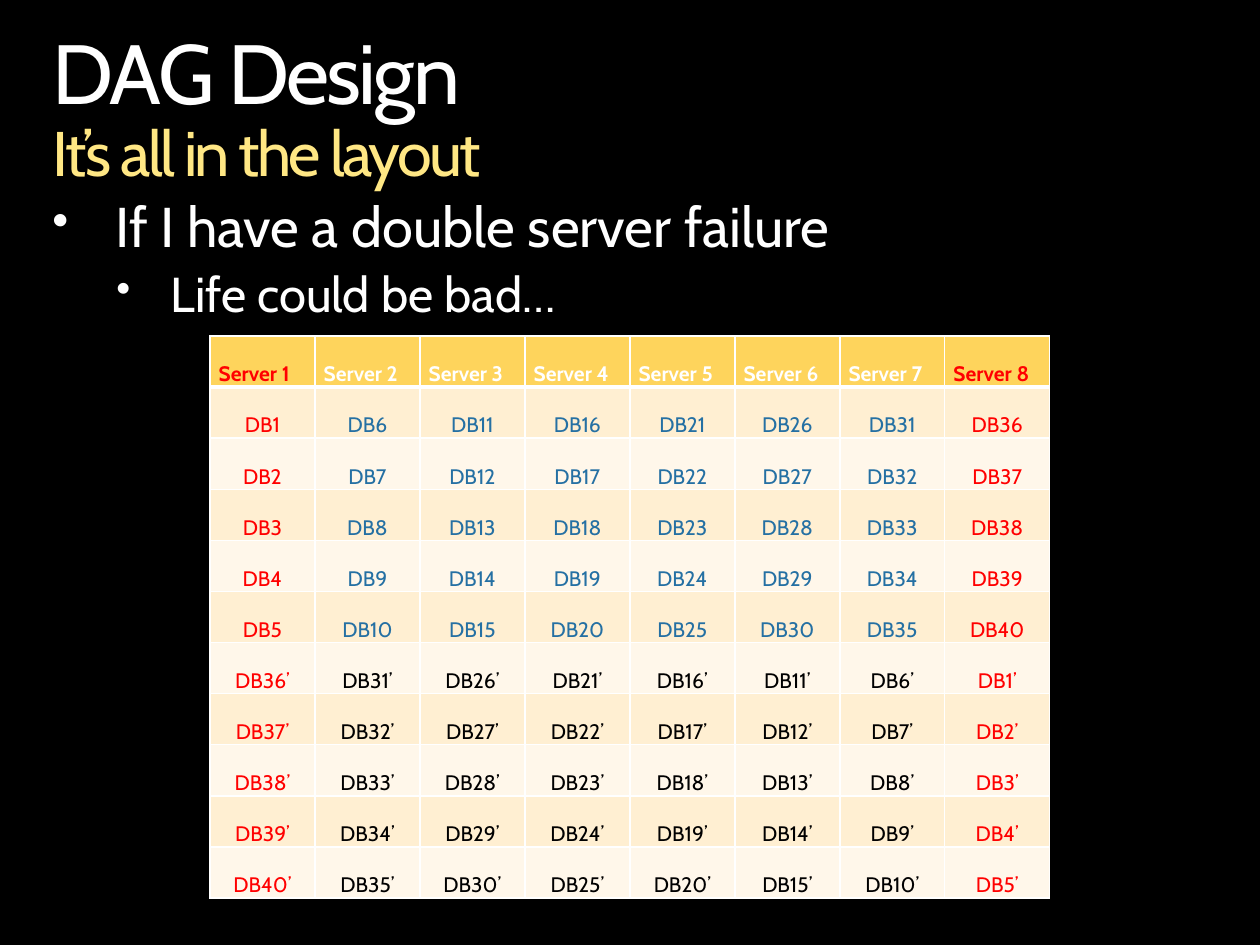
from lxml import etree
from pptx import Presentation
from pptx.dml.color import RGBColor
from pptx.enum.text import MSO_ANCHOR, MSO_AUTO_SIZE, PP_ALIGN
from pptx.oxml.ns import qn
from pptx.util import Pt

BOTTOM, CENTER, LEFT = MSO_ANCHOR.BOTTOM, PP_ALIGN.CENTER, PP_ALIGN.LEFT
GROW = MSO_AUTO_SIZE.SHAPE_TO_FIT_TEXT

TITLE = "DAG Design"
SUB = "It’s all in the layout"
# text, size key, left margin, hanging indent, space before
POINTS = [
    ("If I have a double server failure", "point", 36, -36, 0),
    ("Life could be bad…", "detail", 67.5, -31, 5.6),
]
SERVERS, PER = 8, 5
FAILED = (0, SERVERS - 1)

THEME = {
    "font": "Cabin",
    "size": {"title": 48, "sub": 36, "point": 32, "detail": 28, "cell": 12},
    "back": "000000", "text": "FFFFFF", "sub": "FFE784",
    "head": "FED45C", "bands": ("FFEFD2", "FFF7EA"), "edge": "FFFFFF",
    "fail": "FF0000", "live": "2570A3", "copy": "000000",
}


def rgb(code):
    return RGBColor.from_string(code)


def add_run(para, text, size, color, bold=False, track=None):
    run = para.add_run()
    run.text = text
    font = run.font
    font.name, font.size, font.bold = THEME["font"], Pt(THEME["size"][size]), bold
    font.color.rgb = rgb(color)
    if track is not None:
        run._r.get_or_add_rPr().set("spc", str(round(track * 100)))


def add_box(slide, left, top, width, height):
    frame = slide.shapes.add_textbox(Pt(left), Pt(top), Pt(width), Pt(height)).text_frame
    frame.word_wrap, frame.auto_size = True, GROW
    frame.margin_left = frame.margin_right = frame.margin_top = frame.margin_bottom = 0
    return frame


def add_bullet(para, left, hang):
    props = para._p.get_or_add_pPr()
    props.set("marL", str(Pt(left)))
    props.set("indent", str(Pt(hang)))
    etree.SubElement(props, qn("a:buSzPct"), val="85000")
    etree.SubElement(props, qn("a:buChar"), char="•")


def add_edges(cell, widths):
    """Draw the cell borders; widths run left, right, top, bottom."""
    props = cell._tc.get_or_add_tcPr()
    for side, width in zip("LRTB", widths):
        line = etree.SubElement(props, qn("a:ln" + side), w=str(Pt(width)))
        fill = etree.SubElement(line, qn("a:solidFill"))
        etree.SubElement(fill, qn("a:srgbClr"), val=THEME["edge"])


def label(row, col):
    """Active databases run down each server; copies mirror the server order."""
    if row == 0:
        return f"Server {col + 1}"
    if row <= PER:
        return f"DB{col * PER + row}"
    return f"DB{(SERVERS - 1 - col) * PER + row - PER}’"


def ink(row, col):
    if col in FAILED:
        return THEME["fail"]
    if row == 0:
        return THEME["text"]
    return THEME["live"] if row <= PER else THEME["copy"]


def add_grid(slide, left, top, wide, high):
    rows = 1 + 2 * PER
    table = slide.shapes.add_table(rows, SERVERS, Pt(left), Pt(top),
                                   Pt(wide * SERVERS), Pt(high * rows)).table
    for col in table.columns:
        col.width = Pt(wide)
    for r, row in enumerate(table.rows):
        row.height = Pt(high)
        for c, cell in enumerate(row.cells):
            add_edges(cell, (1, 1, 3 if r == 1 else 1, 3 if r == 0 else 1))
            cell.fill.solid()
            cell.fill.fore_color.rgb = rgb(THEME["bands"][(r - 1) % 2] if r else THEME["head"])
            cell.vertical_anchor = BOTTOM
            cell.margin_left = cell.margin_right = Pt(5)
            cell.margin_top = cell.margin_bottom = 0
            para = cell.text_frame.paragraphs[0]
            para.alignment = CENTER if r else LEFT
            add_run(para, label(r, c), "cell", ink(r, c), bold=r == 0)


def main():
    deck = Presentation()
    deck.slide_width, deck.slide_height = Pt(720), Pt(540)
    slide = deck.slides.add_slide(deck.slide_layouts[6])
    slide.background.fill.solid()
    slide.background.fill.fore_color.rgb = rgb(THEME["back"])

    para = add_box(slide, 30, 18, 660, 91.5).paragraphs[0]
    para.line_spacing = 0.9
    add_run(para, TITLE, "title", THEME["text"], track=-1.5)
    para.add_line_break()
    add_run(para, SUB, "sub", THEME["sub"], track=-1.5)

    frame = add_box(slide, 30, 114, 660, 72)
    for i, (text, size, left, hang, gap) in enumerate(POINTS):
        para = frame.add_paragraph() if i else frame.paragraphs[0]
        para.level = i
        add_bullet(para, left, hang)
        para.line_spacing = 0.9
        para.space_before = Pt(gap)
        add_run(para, text, size, THEME["text"])

    add_grid(slide, 120, 192, 60, 29.2)
    deck.save("out.pptx")


if __name__ == "__main__":
    main()
